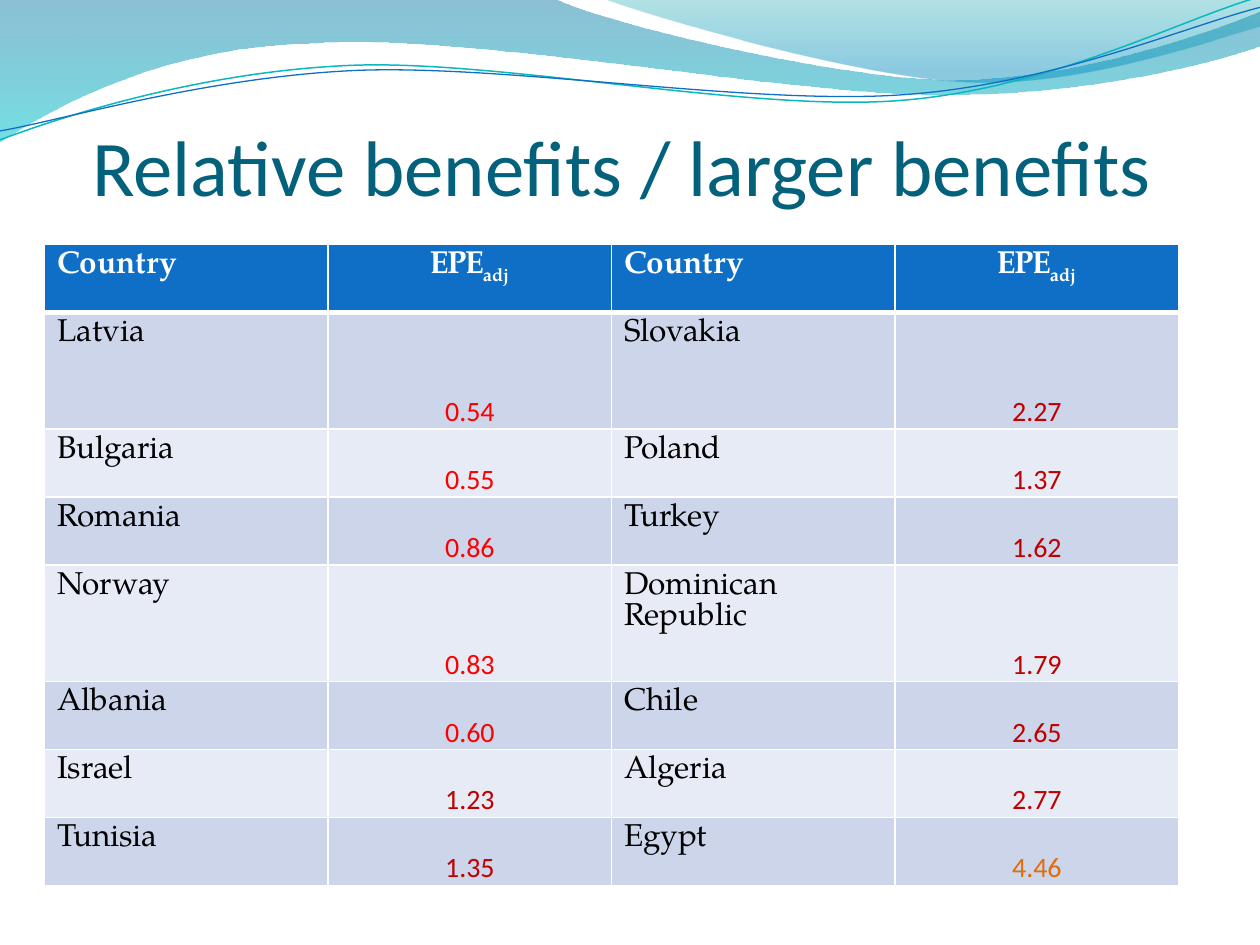
from lxml import etree
from pptx import Presentation
from pptx.dml.color import RGBColor
from pptx.enum import text
from pptx.oxml import ns
from pptx.util import Cm, Pt

COLORS = {
    "title": "04617B", "header": "0F6FC6", "white": "FFFFFF", "black": "000000",
    "odd": "CCD5EA", "even": "E7EBF5",
    "low": "FF0000", "medium": "C00000", "high": "E26B0A",
    "teal": "0AB8BF", "blue": "0F6FC6",
    "wave_top": "0074A1", "wave_bottom": "00C6CF",
    "crest_top": "00A1A9", "crest_bottom": "008BBF",
}
FORMATS = {
    "title": {"name": "Calibri", "size": Pt(45), "bold": False},
    "header": {"name": "TeX Gyre Pagella", "size": Pt(18), "bold": True},
    "country": {"name": "TeX Gyre Pagella", "size": Pt(18), "bold": False},
    "value": {"name": "Calibri", "size": Pt(16), "bold": False},
}
VALUE_CELL = {
    "vertical_anchor": text.MSO_ANCHOR.BOTTOM,
    "margin_left": Cm(0.03), "margin_top": Cm(0.03),
    "margin_right": Cm(0.03), "margin_bottom": 0,
}
TITLE_BOX = {"left": Cm(1.1), "top": Cm(2.33), "width": Cm(22.86), "height": Cm(1.96)}
TITLE_FRAME = {
    "vertical_anchor": text.MSO_ANCHOR.BOTTOM, "auto_size": text.MSO_AUTO_SIZE.NONE,
    "word_wrap": True, "margin_left": 0, "margin_top": Cm(0.13),
    "margin_right": 0, "margin_bottom": 0,
}
WAVE = [
    (0, 0), (11.18, -0.03),
    (12.09, 0.43, 16.87, 1.6, 19.25, 1.6),
    (21.67, 1.6, 24.33, 0.66, 25.4, 0.23),
    (25.43, 0.91),
    (24.97, 1.12, 22.1, 1.93, 18.95, 1.91),
    (15.8, 1.91, 9.7, 0.71, 6.53, 0.86),
    (3.28, 0.91, 1.17, 2.11, -0.03, 2.87),
    (0, 0),
]
CREST = [
    (12.17, -0.03),
    (12.93, 0.28, 17.32, 1.57, 19.53, 1.65),
    (21.74, 1.75, 24.41, 0.81, 25.4, 0.53),
    (25.4, 0), (12.17, -0.03),
]
TEAL_LINE = [
    (0, 2.82),
    (1.22, 2.36, 4.01, 1.45, 7.04, 1.32),
    (10.03, 1.19, 15.06, 2.26, 18.11, 2.03),
    (21.16, 1.8, 23.83, 0.38, 25.35, -0.05),
]
BLUE_LINE = [
    (0, 2.64),
    (1.19, 2.44, 4.17, 1.55, 7.19, 1.42),
    (10.24, 1.3, 15.16, 2.13, 18.21, 1.91),
    (21.23, 1.7, 23.9, 0.53, 25.4, 0.15),
]
COUNTRIES = [
    ("Latvia", "0.54", "Slovakia", "2.27"),
    ("Bulgaria", "0.55", "Poland", "1.37"),
    ("Romania", "0.86", "Turkey", "1.62"),
    ("Norway", "0.83", "Dominican Republic", "1.79"),
    ("Albania", "0.60", "Chile", "2.65"),
    ("Israel", "1.23", "Algeria", "2.77"),
    ("Tunisia", "1.35", "Egypt", "4.46"),
]
ROW_HEIGHT, TALL_HEIGHT, TALL_ROWS = 1.37, 2.35, (1, 4)


def rgb(name):
    return RGBColor.from_string(COLORS[name])


def set_all(target, values):
    for name, value in values.items():
        setattr(target, name, value)


def add_run(p, words, style, color):
    r = p.add_run()
    r.text = words
    set_all(r.font, FORMATS[style])
    r.font.color.rgb = rgb(color)
    return r


def bend(sp, segments):
    outline = next(sp._element.iter(ns.qn("a:path")))
    lines = iter(outline.findall(ns.qn("a:lnTo")))
    for segment in segments[1:]:
        steps = [next(lines) for _ in range(len(segment) // 2)]
        if len(steps) == 1:
            continue
        curve = etree.Element(ns.qn("a:cubicBezTo"))
        steps[0].addprevious(curve)
        for step in steps:
            curve.append(step[0])
            outline.remove(step)


def add_outline(s, segments, closed):
    points = [(Cm(segment[i]), Cm(segment[i + 1]))
              for segment in segments for i in range(0, len(segment), 2)]
    builder = s.shapes.build_freeform(*points[0])
    builder.add_line_segments(points[1:], close=closed)
    sp = builder.convert_to_shape()
    sp.shadow.inherit = False
    bend(sp, segments)
    return sp


def add_wave(s, segments, stops):
    sp = add_outline(s, segments, True)
    sp.line.fill.background()
    sp.fill.gradient()
    sp.fill.gradient_angle = 270
    for stop, (position, color, _) in zip(sp.fill.gradient_stops, stops):
        stop.position = position
        stop.color.rgb = rgb(color)
    for node, (_, _, opacity) in zip(sp._element.spPr.iter(ns.qn("a:srgbClr")), stops):
        etree.SubElement(node, ns.qn("a:alpha"), val=str(opacity * 1000))


def add_curve(s, segments, color, width):
    sp = add_outline(s, segments, False)
    sp.fill.background()
    sp.line.color.rgb = rgb(color)
    sp.line.width = Pt(width)


def add_title(s, words):
    sp = s.shapes.title
    s.shapes._spTree.append(sp._element)
    set_all(sp, TITLE_BOX)
    tf = sp.text_frame
    set_all(tf, TITLE_FRAME)
    p = tf.paragraphs[0]
    p.alignment = text.PP_ALIGN.CENTER
    add_run(p, words, "title", "title")


def paint_cell(cell, fill, bottom):
    tc_pr = cell._tc.get_or_add_tcPr()
    for side, width in (("L", 1), ("R", 1), ("T", 1), ("B", bottom)):
        ln = etree.SubElement(tc_pr, ns.qn(f"a:ln{side}"), w=str(Pt(width)))
        solid = etree.SubElement(ln, ns.qn("a:solidFill"))
        etree.SubElement(solid, ns.qn("a:srgbClr"), val=COLORS["white"])
    cell.fill.solid()
    cell.fill.fore_color.rgb = rgb(fill)


def value_color(value):
    number = float(value)
    return "low" if number < 1 else "medium" if number < 4 else "high"


def fill_header(cell, column):
    paint_cell(cell, "header", 3)
    p = cell.text_frame.paragraphs[0]
    if column % 2 == 0:
        add_run(p, "Country", "header", "white")
        return
    p.alignment = text.PP_ALIGN.CENTER
    add_run(p, "ЕРЕ", "header", "white")
    r = add_run(p, "adj", "header", "white")
    r.font._element.set("baseline", "-25000")


def fill_body(cell, row, column, words):
    paint_cell(cell, "odd" if row % 2 else "even", 1)
    p = cell.text_frame.paragraphs[0]
    if column % 2 == 0:
        add_run(p, words, "country", "black")
        return
    set_all(cell, VALUE_CELL)
    p.alignment = text.PP_ALIGN.CENTER
    add_run(p, words, "value", value_color(words))


def add_country_table(s):
    heights = [TALL_HEIGHT if i in TALL_ROWS else ROW_HEIGHT
               for i in range(len(COUNTRIES) + 1)]
    table = s.shapes.add_table(len(heights), 4, Cm(0.9), Cm(4.93),
                               Cm(22.86), Cm(sum(heights))).table
    for row, height in zip(table.rows, heights):
        row.height = Cm(height)
    for column in range(4):
        fill_header(table.cell(0, column), column)
    for row, entries in enumerate(COUNTRIES, 1):
        for column, words in enumerate(entries):
            fill_body(table.cell(row, column), row, column, words)


def main():
    prs = Presentation()
    prs.slide_width, prs.slide_height = Cm(25.4), Cm(19.05)
    s = prs.slides.add_slide(prs.slide_layouts[5])
    add_wave(s, WAVE, [(0, "wave_top", 45), (1, "wave_bottom", 55)])
    add_wave(s, CREST, [(0, "crest_top", 30), (0.8, "crest_bottom", 45)])
    add_curve(s, TEAL_LINE, "teal", 0.85)
    add_curve(s, BLUE_LINE, "blue", 0.75)
    add_title(s, "Relative benefits / larger benefits")
    add_country_table(s)
    prs.save("out.pptx")


if __name__ == "__main__":
    main()
